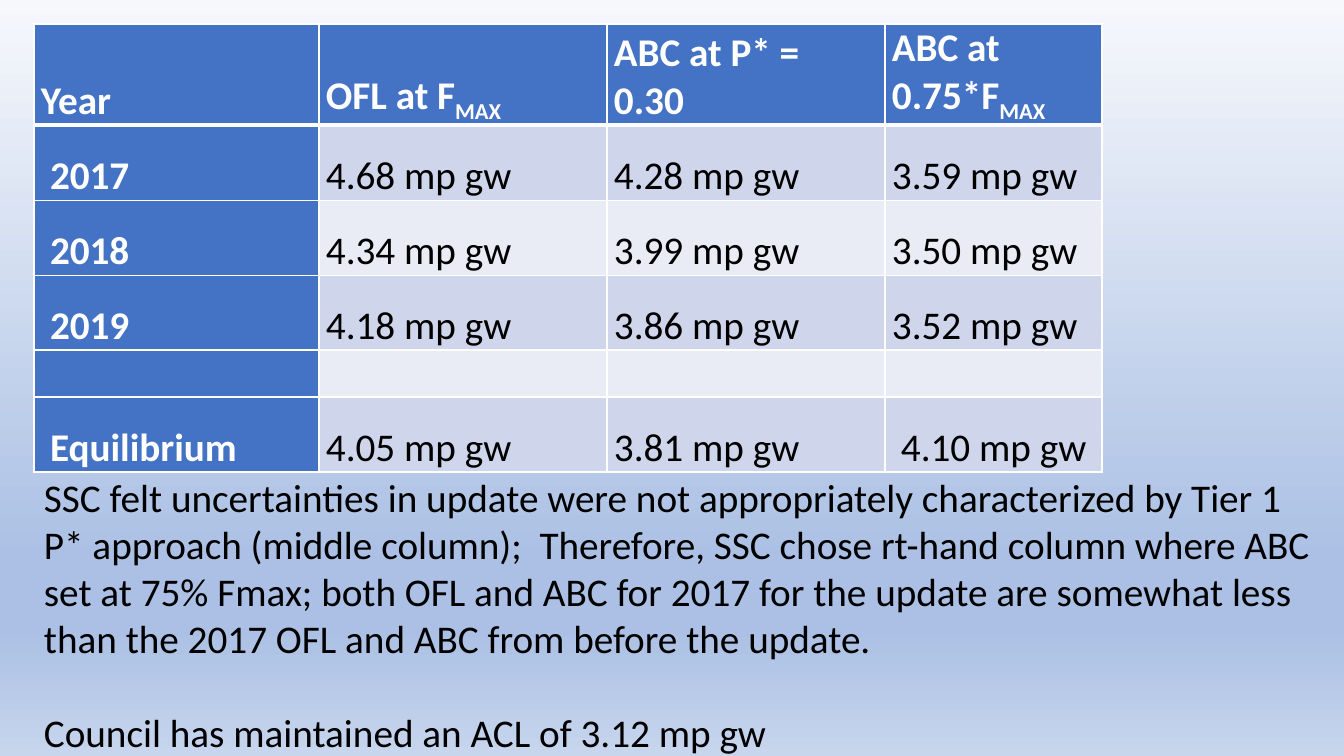
from copy import deepcopy

from lxml.etree import SubElement
from pptx import Presentation
from pptx.dml.color import RGBColor
from pptx.enum.text import MSO_ANCHOR as Anchor, MSO_AUTO_SIZE as AutoSize
from pptx.oxml.ns import qn
from pptx.util import Emu, Pt

# Content: a cell is a list of (text, is_subscript) pieces
HEADERS = [
    [("Year", False)],
    [("OFL at F", False), ("MAX", True)],
    [("ABC at P* = 0.30", False)],
    [("ABC at 0.75*F", False), ("MAX", True)],
]
CATCH_LIMITS = [
    ("2017", "4.68 mp gw", "4.28 mp gw", "3.59 mp gw"),
    ("2018", "4.34 mp gw", "3.99 mp gw", "3.50 mp gw"),
    ("2019", "4.18 mp gw", "3.86 mp gw", "3.52 mp gw"),
    ("", "", "", ""),
    ("Equilibrium", "4.05 mp gw", "3.81 mp gw", "4.10 mp gw"),
]
INDENTED = {(row, 0) for row in range(1, 6)} | {(5, 3)}
NOTES = [
    "SSC felt uncertainties in update were not appropriately characterized by "
    "Tier 1 P* approach (middle column);  Therefore, SSC chose rt-hand column "
    "where ABC set at 75% Fmax; both OFL and ABC for 2017 for the update are "
    "somewhat less than the 2017 OFL and ABC from before the update.",
    "Council has maintained an ACL of 3.12 mp gw",
]

# Style and sizes in px
COLORS = {"header": "4472C4", "odd": "CFD5EA", "even": "E9EBF5",
          "white": "FFFFFF", "black": "000000"}
BACKGROUND = [(0, "F6F8FC"), (0.74, "ABC0E4"), (0.83, "ABC0E4"), (1, "C7D5ED")]
PAGE_WIDTH, PAGE_HEIGHT = 1344, 756
LEFT, TABLE_TOP = 34, 24
COLUMN_WIDTHS = [285, 288, 278, 217]
ROW_HEIGHTS = [101, 75, 75, 75, 47, 75]
CELL_MARGIN, CELL_INDENT = 7, 9
NOTES_BOX = (LEFT, 468, 1299, 295)


def px(length):
    return Emu(round(length * 914400 / 100.8))


def add_text(para, text, color="black", bold=False, subscript=False):
    span = para.add_run()
    span.text = text
    span.font.name = "Calibri"
    span.font.size = Pt(28)
    span.font.bold = bold
    span.font.color.rgb = RGBColor.from_string(COLORS[color])
    if subscript:
        span.font._element.set("baseline", "-25000")


def add_border(cell, side, points):
    line = SubElement(cell._tc.get_or_add_tcPr(), qn(f"a:ln{side}"), w=str(Pt(points)))
    fill = SubElement(line, qn("a:solidFill"))
    SubElement(fill, qn("a:srgbClr"), val=COLORS["white"])


def paint_background(page):
    fill = page.background.fill
    fill.gradient()
    fill.gradient_angle = 270
    stop_list = page.element.find(".//" + qn("a:gsLst"))
    while len(stop_list) < len(BACKGROUND):
        stop_list.append(deepcopy(stop_list[0]))
    for stop, (position, color) in zip(fill.gradient_stops, BACKGROUND):
        stop.position = position
        stop.color.rgb = RGBColor.from_string(color)


def add_limits_table(page):
    rows = HEADERS, *[[[(text, False)] for text in row] for row in CATCH_LIMITS]
    table = page.shapes.add_table(
        len(rows), len(COLUMN_WIDTHS), px(LEFT), px(TABLE_TOP),
        px(sum(COLUMN_WIDTHS)), px(sum(ROW_HEIGHTS))).table
    for column, width in zip(table.columns, COLUMN_WIDTHS):
        column.width = px(width)
    for row, height in zip(table.rows, ROW_HEIGHTS):
        row.height = px(height)

    for r, row in enumerate(rows):
        for c, pieces in enumerate(row):
            cell = table.cell(r, c)
            is_header = r == 0 or c == 0
            band = "header" if is_header else "odd" if r % 2 else "even"
            # Borders come before the fill in the cell properties
            for side in "LRTB":
                thick = (r, side) in ((0, "B"), (1, "T"))
                add_border(cell, side, 3 if thick else 1)
            cell.fill.solid()
            cell.fill.fore_color.rgb = RGBColor.from_string(COLORS[band])
            cell.vertical_anchor = Anchor.BOTTOM
            indent = CELL_INDENT if (r, c) in INDENTED else 0
            cell.margin_left = px(CELL_MARGIN + indent)
            cell.margin_right = px(CELL_MARGIN)
            cell.margin_top = cell.margin_bottom = 0
            for text, subscript in pieces:
                if text:
                    add_text(cell.text_frame.paragraphs[0], text,
                             color="white" if is_header else "black",
                             bold=is_header, subscript=subscript)


def add_notes_text(page):
    frame = page.shapes.add_textbox(*map(px, NOTES_BOX)).text_frame
    frame.word_wrap = True
    frame.auto_size = AutoSize.SHAPE_TO_FIT_TEXT
    for index, text in enumerate(NOTES):
        para = frame.add_paragraph() if index else frame.paragraphs[0]
        if index:
            para.space_before = Pt(34)
        add_text(para, text)


def main():
    deck = Presentation()
    deck.slide_width, deck.slide_height = px(PAGE_WIDTH), px(PAGE_HEIGHT)
    page = deck.slides.add_slide(deck.slide_layouts[6])
    paint_background(page)
    add_limits_table(page)
    add_notes_text(page)
    deck.save("out.pptx")


if __name__ == "__main__":
    main()
